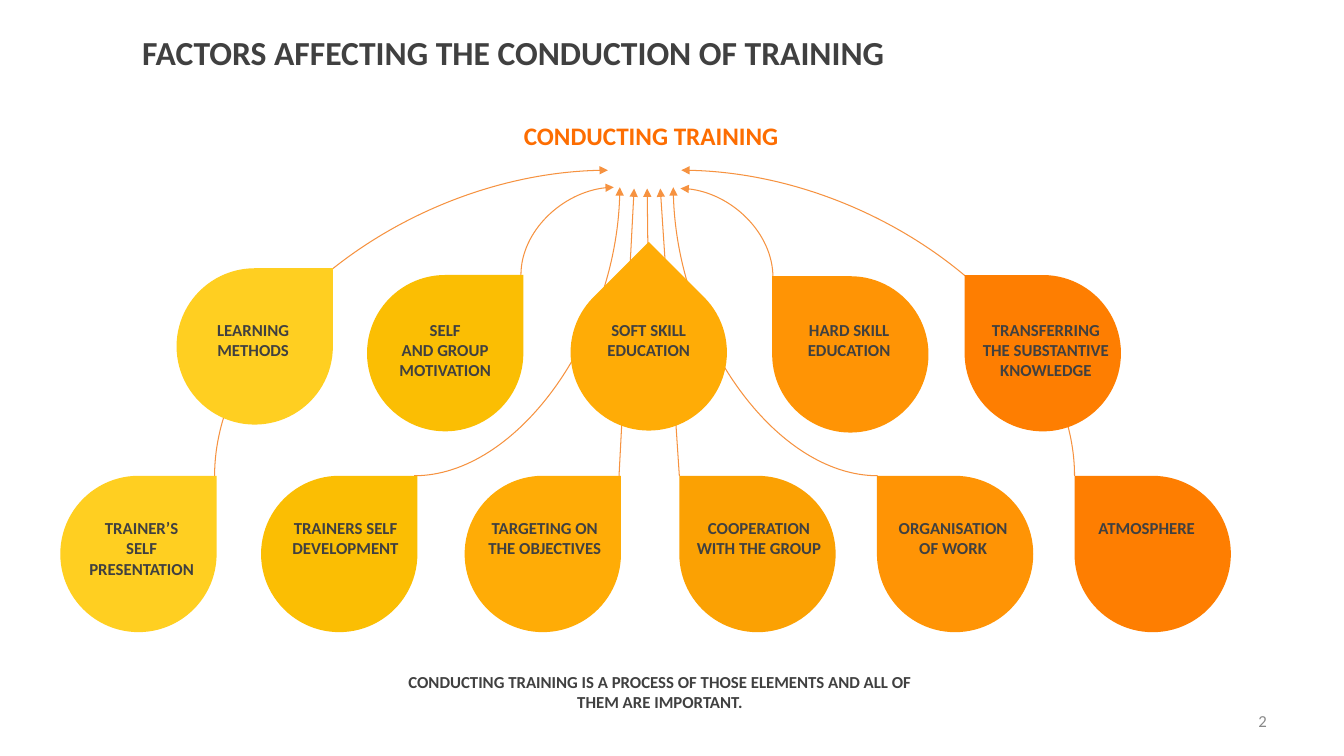
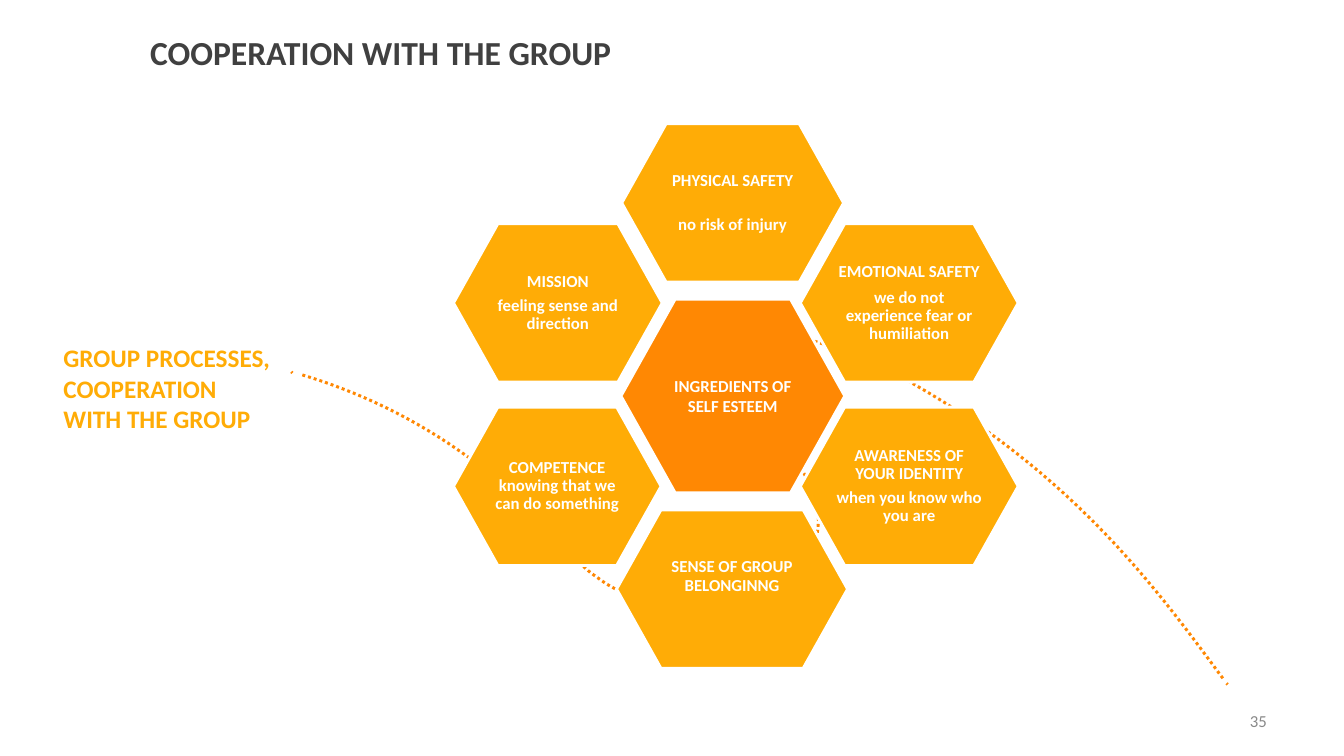
from pptx import Presentation
from pptx.dml.color import RGBColor
from pptx.enum.dml import MSO_LINE
from pptx.enum.shapes import MSO_CONNECTOR, MSO_SHAPE
from pptx.enum.text import MSO_ANCHOR, PP_ALIGN
from pptx.oxml.ns import qn
from pptx.util import Cm, Pt
from lxml.etree import SubElement

FONT = "Calibri"
COLORS = {
    "text": "404040", "number": "898989", "white": "FFFFFF", "arrow": "F69240",
    "heading": "FD6D01", "core": "FF8803", "yellow": "FFCF21", "gold": "FBBE03",
    "amber": "FFAC06", "honey": "FBA103", "orange": "FF9405", "deep": "FE7E01",
}
DROP_SIZE = 3.94
LOWER_TOP = 11.99
UPPER_LABEL_TOP, LOWER_LABEL_TOP = 7.92, 12.93
HEX_HEIGHT = 3.99

# left, top, rotation, colour, label lines, label shift to the right
UPPER_DROPS = [
    (4.45, 6.76, 0, "yellow", "LEARNING\nMETHODS", -0.04),
    (9.25, 6.93, 0, "gold", "SELF\nAND GROUP\nMOTIVATION", 0),
    (14.38, 6.91, 315, "amber", "SOFT SKILL\nEDUCATION", 0),
    (19.46, 6.96, 270, "orange", "HARD SKILL\nEDUCATION", -0.03),
    (24.31, 6.93, 270, "deep", "TRANSFERRING\nTHE SUBSTANTIVE\nKNOWLEDGE", 0.08),
]
LOWER_DROPS = [
    (1.52, LOWER_TOP, 0, "yellow", "TRAINER’S\nSELF\nPRESENTATION", 0.08),
    (6.58, LOWER_TOP, 0, "gold", "TRAINERS SELF\nDEVELOPMENT", 0.16),
    (11.71, LOWER_TOP, 0, "amber", "TARGETING ON\nTHE OBJECTIVES", 0.05),
    (17.12, LOWER_TOP, 270, "honey", "COOPERATION\nWITH THE GROUP", 0.04),
    (22.1, LOWER_TOP, 270, "orange", "ORGANISATION\nOF WORK", -0.05),
    (27.08, LOWER_TOP, 270, "deep", "ATMOSPHERE", -0.15),
]

# begin point, end point, end that carries the arrowhead
STRAIGHT_ARROWS = [
    ((17.12, 11.99), (16.64, 4.75), "tailEnd"),
    ((15.6, 11.99), (15.98, 4.75), "tailEnd"),
    ((16.33, 6.4), (16.31, 4.75), "tailEnd"),
]
CURVED_ARROWS = [
    ((22.12, 11.99), (16.97, 4.72), "tailEnd"),
    ((10.44, 11.99), (15.62, 4.72), "tailEnd"),
    ((15.47, 4.72), (13.13, 6.93), "headEnd"),
    ((15.32, 4.29), (5.41, 11.99), "headEnd"),
    ((17.17, 4.29), (27.08, 11.99), "headEnd"),
    ((17.15, 4.75), (19.48, 6.99), "headEnd"),
]

# left, top, width, text, gap between paragraphs in points, extra room below
HEXAGONS = [
    (15.67, 3.12, 5.59, "PHYSICAL SAFETY\nno risk of injury", 18, 0),
    (20.17, 5.64, 5.49,
     "EMOTIONAL SAFETY\nwe do not experience fear or humiliation", 6, 0),
    (20.17, 10.26, 5.49,
     "AWARENESS OF YOUR IDENTITY\nwhen you know who you are", 4, 0),
    (15.54, 12.85, 5.82, "SENSE OF GROUP BELONGINNG", 0, 0.63),
    (11.43, 10.26, 5.23, "COMPETENCE\nknowing that we can do something", 0, 0),
    (11.43, 5.64, 5.26, "MISSION\nfeeling sense and direction", 4, 0),
]

# Start point, then Bézier pieces of two control points and an end point
WAVE_START = (7.62, 9.45)
WAVE = [
    ((9.22, 9.93), (11.91, 11.05), (14.15, 13.72)),
    ((17.63, 17.83), (24.31, 13.51), (18.06, 10.03)),
    ((14.02, 7.77), (19.1, 7.44), (22.94, 9.63)),
    ((27.2, 12.04), (29.34, 15.11), (30.86, 17.15)),
]
WAVE_ENDS = [[(7.34, 9.37), (7.37, 9.4)], [(30.91, 17.22), (30.94, 17.25)]]


def rgb(name):
    return RGBColor.from_string(COLORS[name])


def write(tf, text, size, color, align=PP_ALIGN.LEFT, bold=True, gap=0, spacing=1):
    tf.text = text
    for i, p in enumerate(tf.paragraphs):
        p.alignment = align
        p.line_spacing = spacing
        if i:
            p.space_before = Pt(gap)
        for r in p.runs:
            r.font.name = FONT
            r.font.size = Pt(size)
            r.font.bold = bold
            r.font.color.rgb = rgb(color)


def add_text(slide, box, text, size, color, wrap=False, **style):
    tf = slide.shapes.add_textbox(*map(Cm, box)).text_frame
    tf.word_wrap = wrap
    write(tf, text, size, color, **style)
    return tf


def add_slide(prs, title, title_left, number):
    """Add a slide with the shared title style and page number."""
    slide = prs.slides.add_slide(prs.slide_layouts[5])
    sp = slide.shapes.title
    sp.left, sp.top, sp.width, sp.height = map(Cm, (title_left, 0.53, 23.6, 1.57))
    sp.text_frame.vertical_anchor = MSO_ANCHOR.MIDDLE
    write(sp.text_frame, title, 24, "text")
    tf = add_text(slide, (24.28, 17.65, 7.9, 1.02), number, 12, "number",
                  wrap=True, align=PP_ALIGN.RIGHT, bold=False)
    tf.vertical_anchor = MSO_ANCHOR.MIDDLE
    return slide


def add_filled(slide, preset, box, color):
    sp = slide.shapes.add_shape(preset, *map(Cm, box))
    sp.shadow.inherit = False
    sp.fill.solid()
    sp.fill.fore_color.rgb = rgb(color)
    sp.line.fill.background()
    return sp


def add_arrow(slide, begin, end, head, curved=False):
    """A curved arrow leaves its begin point level and meets its end point upright."""
    kind = MSO_CONNECTOR.CURVE if curved else MSO_CONNECTOR.STRAIGHT
    line = slide.shapes.add_connector(kind, *map(Cm, begin + end))
    line.line.color.rgb = rgb("arrow")
    line.line.width = Pt(0.75)
    props = line._element.spPr
    if curved:
        props.find(qn("a:prstGeom")).set("prst", "curvedConnector2")
    SubElement(props.find(qn("a:ln")), qn("a:" + head), type="triangle")
    SubElement(props, qn("a:effectLst"))


def add_drop(slide, left, top, rotation, color):
    sp = add_filled(slide, MSO_SHAPE.TEAR, (left, top, DROP_SIZE, DROP_SIZE), color)
    sp.rotation = rotation


def add_hexagon(slide, box, color, text, gap=0, room_below=0, spacing=0.9):
    sp = add_filled(slide, MSO_SHAPE.HEXAGON, box, color)
    sp.adjustments[0] = 0.28
    sp.line.color.rgb = rgb("white")
    sp.line.width = Pt(2)
    tf = sp.text_frame
    tf.word_wrap = True
    tf.vertical_anchor = MSO_ANCHOR.MIDDLE
    tf.margin_left = tf.margin_right = tf.margin_top = Cm(0.04)
    tf.margin_bottom = Cm(0.04 + room_below)
    write(tf, text, 12, "white", align=PP_ALIGN.CENTER, gap=gap, spacing=spacing)


def bezier_points(start, pieces, steps=30):
    points = [start]
    for c1, c2, end in pieces:
        begin = points[-1]
        for i in range(1, steps + 1):
            t = i / steps
            u = 1 - t
            points.append(tuple(
                u**3 * a + 3 * u * u * t * b + 3 * u * t * t * c + t**3 * d
                for a, b, c, d in zip(begin, c1, c2, end)))
    return points


def add_dotted_line(slide, points):
    points = [(Cm(x), Cm(y)) for x, y in points]
    builder = slide.shapes.build_freeform(*points[0])
    builder.add_line_segments(points[1:], close=False)
    sp = builder.convert_to_shape()
    sp.shadow.inherit = False
    sp.fill.background()
    sp.line.color.rgb = rgb("core")
    sp.line.width = Pt(2.13)
    sp.line.dash_style = MSO_LINE.ROUND_DOT


def build_factors(prs):
    slide = add_slide(prs, "FACTORS AFFECTING THE CONDUCTION OF TRAINING", 3.33, "2")
    for arrow in STRAIGHT_ARROWS:
        add_arrow(slide, *arrow)
    for arrow in CURVED_ARROWS:
        add_arrow(slide, *arrow, curved=True)
    for drops, label_top in ((LOWER_DROPS, LOWER_LABEL_TOP),
                             (UPPER_DROPS, UPPER_LABEL_TOP)):
        for left, top, rotation, color, label, shift in drops:
            add_drop(slide, left, top, rotation, color)
            height = 0.25 + 0.51 * (label.count("\n") + 1)
            add_text(slide, (left + shift, label_top, DROP_SIZE, height),
                     label, 12, "text", align=PP_ALIGN.CENTER)
    add_text(slide, (12.95, 2.9, 6.99, 1.02), "CONDUCTING TRAINING", 18, "heading")
    add_text(slide, (9.8, 16.81, 13.67, 1.27),
             "CONDUCTING TRAINING IS A PROCESS OF THOSE ELEMENTS "
             "AND ALL OF THEM ARE IMPORTANT.",
             12, "text", wrap=True, align=PP_ALIGN.CENTER)


def build_cooperation(prs):
    slide = add_slide(prs, "COOPERATION WITH THE GROUP", 3.53, "35")
    for points in [bezier_points(WAVE_START, WAVE), *WAVE_ENDS]:
        add_dotted_line(slide, points)
    add_hexagon(slide, (15.65, 7.54, 5.64, 4.88), "core",
                "INGREDIENTS OF SELF ESTEEM", spacing=1)
    for left, top, width, text, gap, room_below in HEXAGONS:
        add_hexagon(slide, (left, top, width, HEX_HEIGHT), "amber",
                    text, gap, room_below)
    add_text(slide, (1.35, 8.51, 5.92, 2.54),
             "GROUP PROCESSES,\nCOOPERATION\nWITH THE GROUP", 18, "amber")


def main():
    prs = Presentation()
    prs.slide_width, prs.slide_height = Cm(33.87), Cm(19.05)
    build_factors(prs)
    build_cooperation(prs)
    prs.save("out.pptx")


if __name__ == "__main__":
    main()
